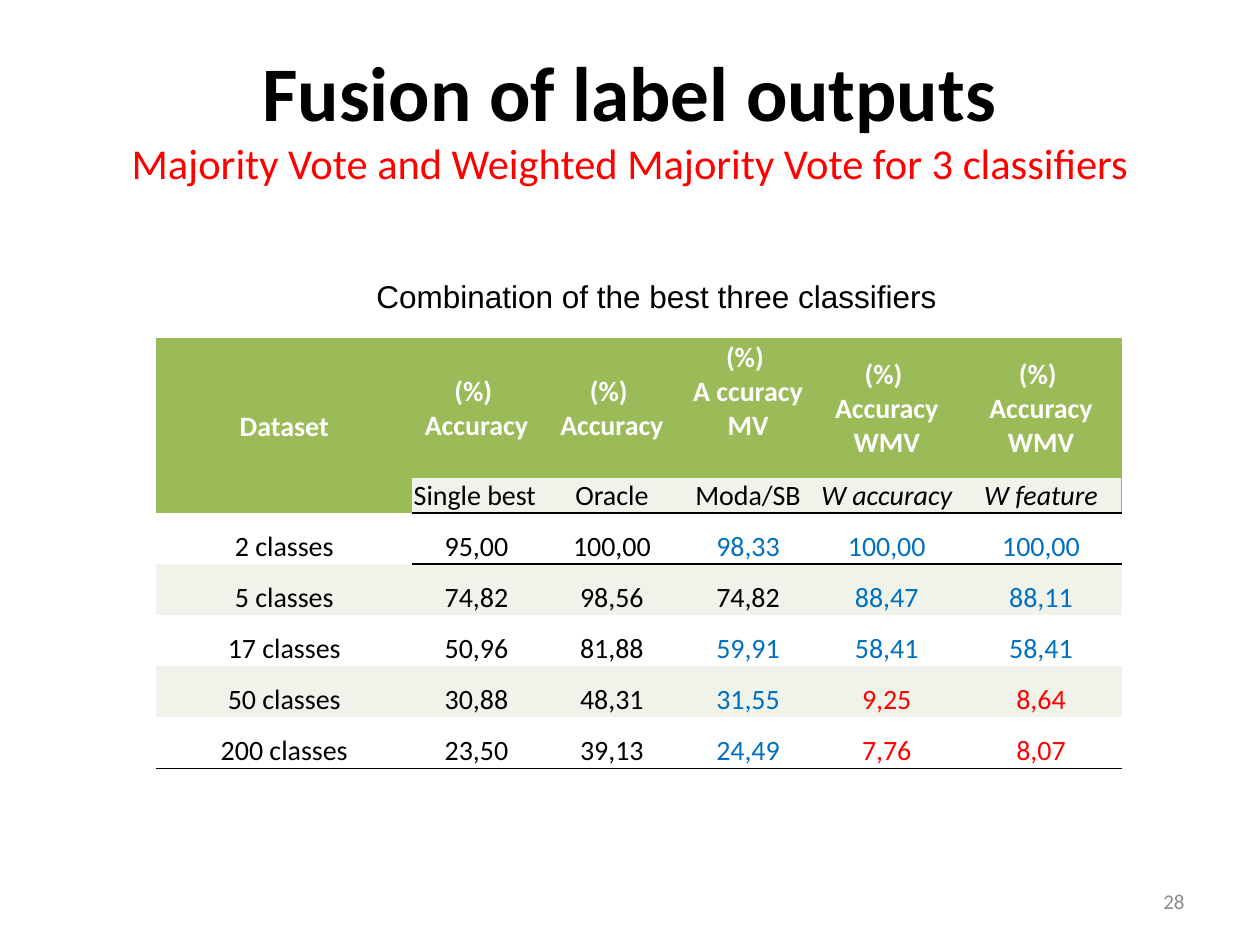
from lxml.etree import SubElement
from pptx import Presentation
from pptx.dml.color import RGBColor
from pptx.enum.text import MSO_ANCHOR as Anchor, PP_ALIGN as Align
from pptx.oxml.ns import qn
from pptx.util import Cm, Pt

BLACK, WHITE, RED, BLUE = "000000", "FFFFFF", "FF0000", "0070C0"
GREEN, PALE, GREY = "9BBB59", "EFF3EA", "8C8C8C"
PLAIN_STYLE = "{2D5ABB26-0587-4C30-8999-92F81FD0307C}"

COLUMN_WIDTHS = [5.16, 2.59, 2.87, 2.62, 2.97, 3.25]
ROW_HEIGHTS = [2.8, 0.71] + [1.03] * 5
HEADINGS = ["Dataset", "(%) \nAccuracy", "(%) \nAccuracy", "(%) \nA ccuracy\nMV",
            "(%) \nAccuracy\nWMV", "(%) \nAccuracy\nWMV"]
METHODS = ["", "Single best", "Oracle", "Moda/SB", "W accuracy", "W feature"]
RESULTS = [
    (["2 classes", "95,00", "100,00", "98,33", "100,00", "100,00"], [BLUE] * 3),
    (["5 classes", "74,82", "98,56", "74,82", "88,47", "88,11"], [BLACK, BLUE, BLUE]),
    (["17 classes", "50,96", "81,88", "59,91", "58,41", "58,41"], [BLUE] * 3),
    (["50 classes", "30,88", "48,31", "31,55", "9,25", "8,64"], [BLUE, RED, RED]),
    (["200 classes", "23,50", "39,13", "24,49", "7,76", "8,07"], [BLUE, RED, RED]),
]


def color(code):
    """Turn a hex string into a colour."""
    return RGBColor.from_string(code)


def apply(target, formats):
    """Set every attribute named in a dict."""
    for name, value in formats.items():
        setattr(target, name, value)


def add_span(para, text, size, code=BLACK, face="Calibri", **formats):
    """Append one formatted run to a paragraph."""
    span = para.add_run()
    span.text = text
    apply(span.font, {"size": Pt(size), "name": face, **formats})
    span.font.color.rgb = color(code)


def add_box(page, box, align, anchor=Anchor.TOP, wrap=True):
    """Add a text box and return its first paragraph."""
    frame = page.shapes.add_textbox(*map(Cm, box)).text_frame
    apply(frame, {"word_wrap": wrap, "vertical_anchor": anchor})
    para = frame.paragraphs[0]
    para.alignment = align
    return para


def add_title(page, box):
    """Write the title with its subtitle on the next line."""
    para = add_box(page, box, Align.CENTER, Anchor.MIDDLE)
    add_span(para, "Fusion of label outputs", 44.1, bold=True)
    para.add_line_break()
    add_span(para, "Majority Vote and Weighted Majority Vote for 3 classifiers", 24.3, RED)


def add_caption(page, box):
    """Write the caption above the table."""
    para = add_box(page, box, Align.LEFT, wrap=False)
    add_span(para, "Combination of the best three classifiers", 18, face="Arial")


def add_page_number(page, box):
    """Write the page number."""
    add_span(add_box(page, box, Align.RIGHT, Anchor.MIDDLE), "28", 12, GREY)


def fill_cell(cell, text, back, anchor, borders, align=Align.CENTER, **formats):
    """Give a cell its borders, fill and text."""
    properties = cell._tc.get_or_add_tcPr()
    for side in "LRTB":
        if side in borders:
            line = SubElement(properties, qn(f"a:ln{side}"), w=str(Pt(1)))
            fill = SubElement(line, qn("a:solidFill"))
            SubElement(fill, qn("a:srgbClr"), val=borders[side])
    cell.fill.solid()
    cell.fill.fore_color.rgb = color(back)
    apply(cell, {"vertical_anchor": anchor, "margin_left": Cm(0.03), "margin_right": Cm(0.03),
                 "margin_top": Cm(0.03), "margin_bottom": 0})
    for index, line_text in enumerate(text.split("\n")):
        frame = cell.text_frame
        para = frame.add_paragraph() if index else frame.paragraphs[0]
        para.alignment = align
        if line_text:
            add_span(para, line_text, 16, **formats)


def fill_header(table):
    """Fill the heading row and the method row."""
    last = len(HEADINGS) - 1
    for column, (heading, method) in enumerate(zip(HEADINGS, METHODS)):
        top, below = table.cell(0, column), table.cell(1, column)
        edge = {"L": GREEN} if column == 0 else {"B": GREEN}
        right = {"R": GREEN} if column == last else {}
        fill_cell(top, heading, GREEN, Anchor.MIDDLE, {"T": GREEN, **edge, **right},
                  code=WHITE, bold=True)
        if column:
            fill_cell(below, method, PALE, Anchor.MIDDLE, {"T": GREEN, "B": BLACK, **right},
                      align=Align.LEFT if column == 1 else Align.CENTER,
                      italic=method.startswith("W "))
    table.cell(0, 3).margin_bottom = Cm(0.69)
    table.cell(0, 0).merge(table.cell(1, 0))


def fill_results(table):
    """Fill the banded rows of accuracies."""
    for index, (values, codes) in enumerate(RESULTS):
        for column, (value, code) in enumerate(zip(values, [BLACK] * 3 + codes)):
            borders = {"T": BLACK} if index == 0 and column else {}
            if index == len(RESULTS) - 1:
                borders = {"B": BLACK}
            fill_cell(table.cell(index + 2, column), value, PALE if index % 2 else WHITE,
                      Anchor.BOTTOM, borders, code=code)


def add_results_table(page, left, top):
    """Build the accuracy table from its top left corner."""
    table = page.shapes.add_table(
        len(ROW_HEIGHTS), len(COLUMN_WIDTHS), Cm(left), Cm(top),
        Cm(sum(COLUMN_WIDTHS)), Cm(sum(ROW_HEIGHTS))).table
    apply(table, {"first_row": False, "horz_banding": False})
    table._tbl.tblPr.find(qn("a:tableStyleId")).text = PLAIN_STYLE
    for column, width in zip(table.columns, COLUMN_WIDTHS):
        column.width = Cm(width)
    for row, height in zip(table.rows, ROW_HEIGHTS):
        row.height = Cm(height)
    fill_header(table)
    fill_results(table)


def main():
    """Build the deck and save it."""
    deck = Presentation()
    apply(deck, {"slide_width": Cm(25.4), "slide_height": Cm(19.05)})
    page = deck.slides.add_slide(deck.slide_layouts[6])
    add_title(page, (1.27, 0.76, 22.86, 3.18))
    add_results_table(page, 3.15, 6.83)
    add_caption(page, (7.34, 5.46, 11.91, 1.02))
    add_page_number(page, (18.2, 17.65, 5.93, 1.02))
    deck.save("out.pptx")


if __name__ == "__main__":
    main()
